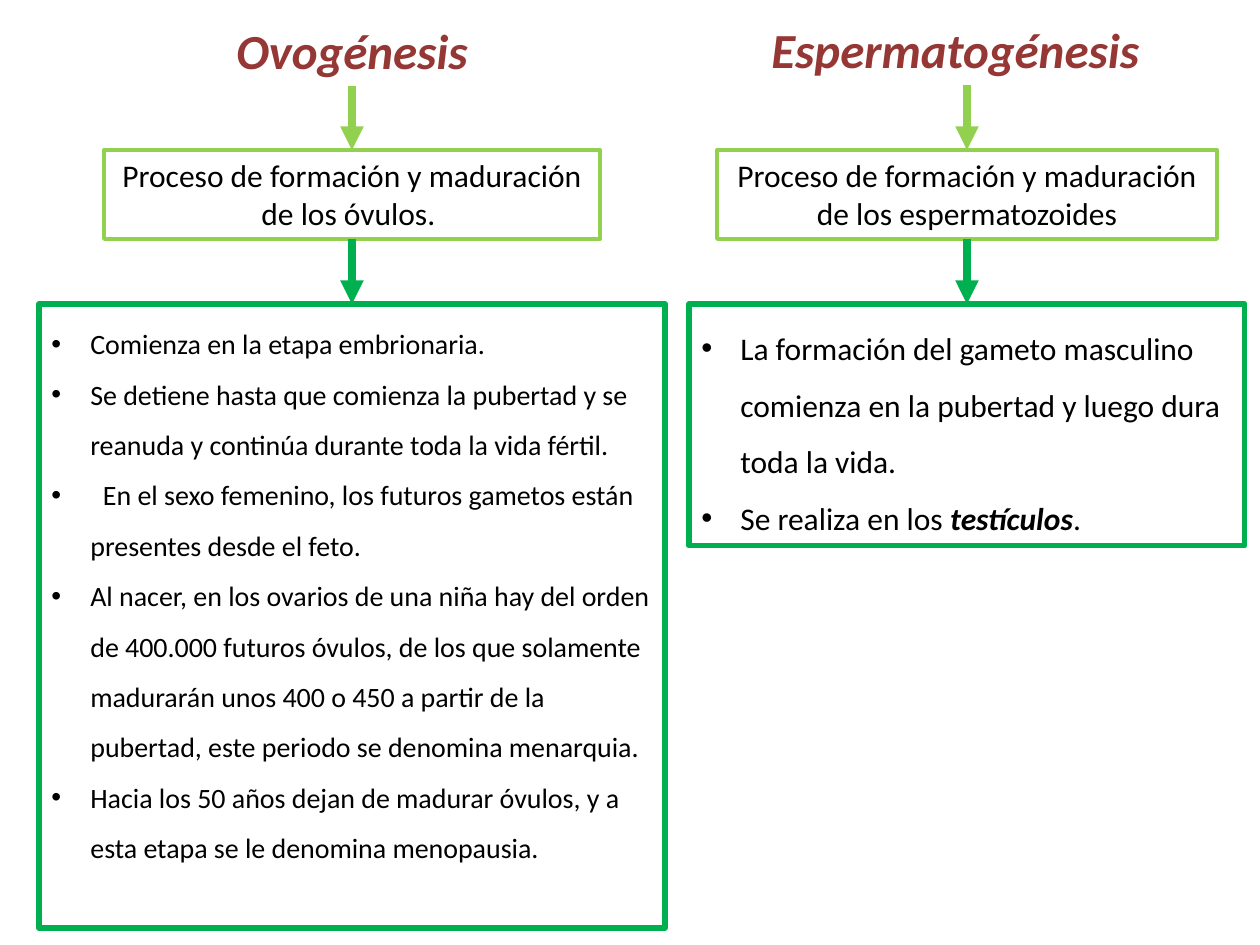
from pptx import Presentation
from pptx.dml.color import RGBColor
from pptx.enum.shapes import MSO_CONNECTOR as Connector, MSO_SHAPE as Shape
from pptx.enum.text import MSO_ANCHOR as Anchor, PP_ALIGN as Align
from pptx.oxml.ns import qn
from pptx.util import Pt
from lxml.etree import SubElement

PX = 914400 / 126
FONT = "Calibri"
BLACK = RGBColor(0x00, 0x00, 0x00)
MAROON = RGBColor(0x95, 0x37, 0x35)
LIME = RGBColor(0x92, 0xD0, 0x50)
GREEN = RGBColor(0x00, 0xB0, 0x50)

DEFINITION_TOP, DEFINITION_HEIGHT = 150, 89
DETAILS_TOP = 304
TITLE_HEIGHT = 72
INDENT = 39

COLUMNS = [
    {
        "center": 352,
        "title": "Ovogénesis",
        "title_top": 14,
        "title_width": 268,
        "title_align": Align.CENTER,
        "definition": "Proceso de formación y maduración de los óvulos. ",
        "definition_width": 496,
        "details": [
            ["Comienza en la etapa embrionaria."],
            ["Se detiene hasta que comienza la pubertad y se reanuda y continúa "
             "durante toda la vida fértil."],
            ["  En el sexo femenino, los futuros gametos están presentes desde el feto."],
            ["Al nacer, en los ovarios de una niña hay del orden de 400.000 futuros "
             "óvulos, de los que solamente madurarán unos 400 o 450 a partir de la "
             "pubertad, este periodo se denomina menarquia."],
            ["Hacia los 50 años dejan de madurar óvulos, y a esta etapa se le "
             "denomina menopausia."],
        ],
        "details_size": 16,
        "details_width": 626,
        "details_height": 624,
    },
    {
        "center": 967,
        "title": "Espermatogénesis",
        "title_top": 13,
        "title_width": 416,
        "title_align": Align.LEFT,
        "definition": "Proceso de formación y maduración de los espermatozoides",
        "definition_width": 500,
        "details": [
            ["La formación del gameto masculino comienza en la pubertad y luego "
             "dura toda la vida."],
            ["Se realiza en los ", ("testículos",), "."],
        ],
        "details_size": 18,
        "details_width": 556,
        "details_height": 242,
    },
]


def px(value):
    return round(value * PX)


def bounds(center, top, width, height):
    return [px(value) for value in (center - width / 2, top, width, height)]


def style_paragraph(paragraph, size, color, align):
    paragraph.alignment = align
    font = paragraph.font
    font.name, font.size, font.color.rgb = FONT, Pt(size), color


def add_title(slide, column):
    shape = slide.shapes.add_textbox(*bounds(
        column["center"], column["title_top"], column["title_width"], TITLE_HEIGHT))
    shape.text_frame.word_wrap = True
    paragraph = shape.text_frame.paragraphs[0]
    paragraph.text = column["title"]
    style_paragraph(paragraph, 28, MAROON, column["title_align"])
    paragraph.font.bold = paragraph.font.italic = True
    return shape


def add_box(slide, box, color, line_width):
    shape = slide.shapes.add_shape(Shape.RECTANGLE, *box)
    shape.shadow.inherit = False
    shape.fill.background()
    shape.line.color.rgb = color
    shape.line.width = Pt(line_width)
    shape.text_frame.word_wrap = True
    shape.text_frame.vertical_anchor = Anchor.TOP
    return shape


def add_definition(slide, column):
    shape = add_box(slide, bounds(
        column["center"], DEFINITION_TOP, column["definition_width"],
        DEFINITION_HEIGHT), LIME, 2.25)
    paragraph = shape.text_frame.paragraphs[0]
    paragraph.text = column["definition"]
    style_paragraph(paragraph, 18, BLACK, Align.CENTER)
    return shape


def add_bullet(paragraph):
    properties = paragraph._p.get_or_add_pPr()
    properties.set("marL", str(px(INDENT)))
    properties.set("indent", str(-px(INDENT)))
    bullet_font = properties.makeelement(qn("a:buFont"), {"typeface": "Arial"})
    bullet = properties.makeelement(qn("a:buChar"), {"char": "•"})
    default_font = properties.find(qn("a:defRPr"))
    default_font.addprevious(bullet_font)
    default_font.addprevious(bullet)


def add_details(slide, column):
    shape = add_box(slide, bounds(
        column["center"], DETAILS_TOP, column["details_width"],
        column["details_height"]), GREEN, 3)
    frame = shape.text_frame
    for index, parts in enumerate(column["details"]):
        paragraph = frame.add_paragraph() if index else frame.paragraphs[0]
        for part in parts:
            run = paragraph.add_run()
            if isinstance(part, tuple):
                run.text = part[0]
                run.font.bold = run.font.italic = True
            else:
                run.text = part
        paragraph.line_spacing = 1.5
        style_paragraph(paragraph, column["details_size"], BLACK, Align.LEFT)
        add_bullet(paragraph)
    return shape


def add_arrow(slide, upper, lower, color):
    arrow = slide.shapes.add_connector(Connector.STRAIGHT, 0, 0, 0, 0)
    arrow.begin_connect(upper, 2)
    arrow.end_connect(lower, 0)
    arrow.line.color.rgb = color
    arrow.line.width = Pt(4.5)
    SubElement(arrow.line._get_or_add_ln(), qn("a:tailEnd"), type="triangle")
    SubElement(arrow._element.spPr, qn("a:effectLst"))


def main():
    presentation = Presentation()
    presentation.slide_width, presentation.slide_height = px(1260), px(945)
    slide = presentation.slides.add_slide(presentation.slide_layouts[6])
    for column in COLUMNS:
        title = add_title(slide, column)
        definition = add_definition(slide, column)
        details = add_details(slide, column)
        add_arrow(slide, title, definition, LIME)
        add_arrow(slide, definition, details, GREEN)
    presentation.save("out.pptx")


if __name__ == "__main__":
    main()
